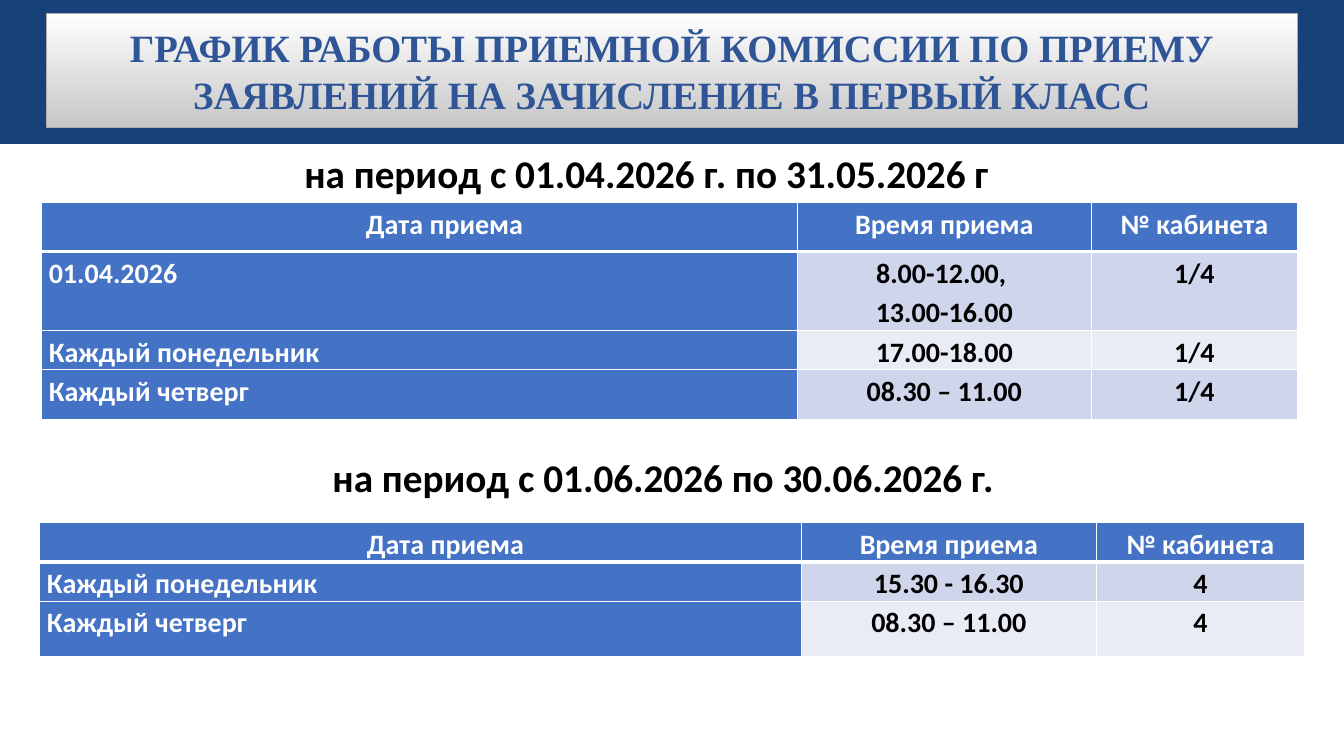
from pptx import Presentation
from pptx.dml.color import RGBColor as Rgb
from pptx.enum.shapes import MSO_SHAPE as Shape
from pptx.enum.text import MSO_ANCHOR as Anchor, MSO_AUTO_SIZE as AutoSize, PP_ALIGN as Align
from pptx.oxml import parse_xml
from pptx.oxml.ns import nsdecls
from pptx.util import Cm, Pt

COLORS = {
    "banner": "184179",
    "title": "2F5597",
    "plate_top": "FEFEFE",
    "plate_bottom": "C7C7C7",
    "plate_line": "AEAEAE",
    "header": "4472C4",
    "band_odd": "CFD5EA",
    "band_even": "E9EBF5",
    "white": "FFFFFF",
    "black": "000000",
}
HEADINGS = ["Дата приема", "Время приема", "№ кабинета"]
HEADING_INDENTS = [1.25, 0, -0.18]
BODY_INDENTS = [0, 0, -0.18]


def color(name):
    return Rgb.from_string(COLORS[name])


class ScheduleSlide:
    body_font = "Calibri"
    title_font = "Times New Roman"

    def __init__(self, deck):
        self.slide = deck.slides.add_slide(deck.slide_layouts[6])

    def style_text(self, para, size, tint, font=body_font, align=Align.CENTER):
        para.alignment = align
        for span in para.runs:
            span.font.name = font
            span.font.size = Pt(size)
            span.font.bold = True
            span.font.color.rgb = color(tint)

    def rectangle(self, left, top, width, height):
        box = self.slide.shapes.add_shape(
            Shape.RECTANGLE, Cm(left), Cm(top), Cm(width), Cm(height))
        box.shadow.inherit = False
        return box

    def banner(self, left, top, width, height):
        box = self.rectangle(left, top, width, height)
        box.fill.solid()
        box.fill.fore_color.rgb = color("banner")
        box.line.fill.background()

    def title(self, left, top, width, height, text):
        box = self.rectangle(left, top, width, height)
        box.fill.gradient()
        box.fill.gradient_angle = 270
        for stop, name in zip(box.fill.gradient_stops, ("plate_top", "plate_bottom")):
            stop.color.rgb = color(name)
        box.line.color.rgb = color("plate_line")
        box.line.width = Pt(0.75)
        frame = box.text_frame
        frame.word_wrap = True
        frame.vertical_anchor = Anchor.MIDDLE
        frame.text = text
        self.style_text(frame.paragraphs[0], 27.6, "title", self.title_font)

    def period(self, left, top, width, height, text, align):
        box = self.slide.shapes.add_textbox(Cm(left), Cm(top), Cm(width), Cm(height))
        frame = box.text_frame
        frame.word_wrap = True
        frame.auto_size = AutoSize.SHAPE_TO_FIT_TEXT
        frame.text = text
        self.style_text(frame.paragraphs[0], 28, "black", align=align)

    def borders(self, cell, row):
        widths = {"L": 1, "R": 1, "T": 3 if row == 1 else 1, "B": 3 if row == 0 else 1}
        properties = cell._tc.get_or_add_tcPr()
        for side, width in widths.items():
            properties.append(parse_xml(
                f'<a:ln{side} {nsdecls("a")} w="{Pt(width)}"><a:solidFill>'
                f'<a:srgbClr val="{COLORS["white"]}"/></a:solidFill></a:ln{side}>'))

    def cell(self, cell, row, column, text):
        self.borders(cell, row)
        on_blue = row == 0 or column == 0
        band = "band_odd" if row % 2 else "band_even"
        cell.fill.solid()
        cell.fill.fore_color.rgb = color("header" if on_blue else band)
        cell.margin_left = cell.margin_right = Cm(0.18)
        cell.margin_top = cell.margin_bottom = 0
        cell.text_frame.text = text
        indents = BODY_INDENTS if row else HEADING_INDENTS
        align = Align.LEFT if row and column == 0 else Align.CENTER
        for para in cell.text_frame.paragraphs:
            para.line_spacing = 1.15
            para._p.get_or_add_pPr().set("indent", str(Cm(indents[column])))
            self.style_text(para, 20, "white" if on_blue else "black", align=align)

    def schedule(self, left, top, widths, heights, entries):
        rows = [HEADINGS] + entries
        table = self.slide.shapes.add_table(
            len(rows), len(widths), Cm(left), Cm(top),
            Cm(sum(widths)), Cm(sum(heights))).table
        for column, width in zip(table.columns, widths):
            column.width = Cm(width)
        for line, height in zip(table.rows, heights):
            line.height = Cm(height)
        for row, texts in enumerate(rows):
            for column, text in enumerate(texts):
                self.cell(table.cell(row, column), row, column, text)


def main():
    deck = Presentation()
    deck.slide_width, deck.slide_height = Cm(33.87), Cm(19.05)
    page = ScheduleSlide(deck)
    page.banner(0, 0, 33.87, 3.63)
    page.title(1.17, 0.34, 31.52, 2.87,
               "ГРАФИК РАБОТЫ ПРИЕМНОЙ КОМИССИИ ПО ПРИЕМУ "
               "ЗАЯВЛЕНИЙ НА ЗАЧИСЛЕНИЕ В ПЕРВЫЙ КЛАСС")
    page.schedule(1.05, 5.1, [19.05, 7.4, 5.2], [1.24, 1.8, 0.91, 1.24], [
        ["01.04.2026", "8.00-12.00, \n13.00-16.00", "1/4"],
        ["Каждый понедельник", "17.00-18.00", "1/4"],
        ["Каждый четверг", "08.30 – 11.00", "1/4"],
    ])
    page.schedule(1, 13.16, [19.2, 7.43, 5.24], [0.97, 0.97, 1.4], [
        ["Каждый понедельник", "15.30 - 16.30", "4"],
        ["Каждый четверг", "08.30 – 11.00", "4"],
    ])
    page.period(7.42, 3.63, 20.07, 1.45,
                "на период с 01.04.2026 г. по 31.05.2026 г", Align.LEFT)
    page.period(0.61, 11.3, 32.2, 1.45,
                "на период с 01.06.2026 по 30.06.2026 г.", Align.CENTER)
    deck.save("out.pptx")


if __name__ == "__main__":
    main()
